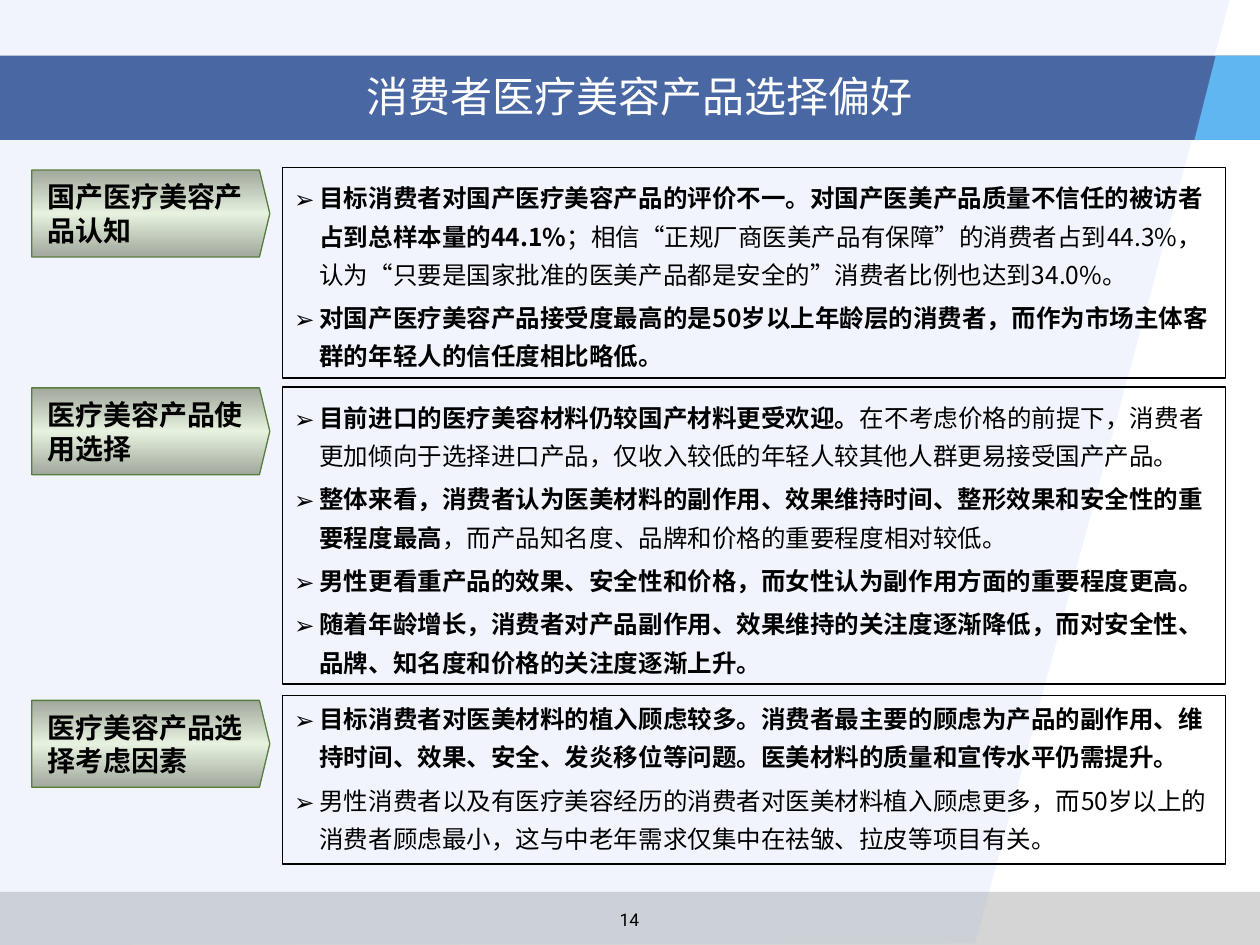
from copy import deepcopy
from dataclasses import dataclass

from lxml import etree
from pptx import Presentation
from pptx.dml.color import RGBColor
from pptx.enum.lang import MSO_LANGUAGE_ID
from pptx.enum.shapes import MSO_SHAPE
from pptx.enum.text import MSO_ANCHOR, PP_ALIGN
from pptx.oxml.ns import qn
from pptx.util import Cm, Pt

RECTANGLE = MSO_SHAPE.RECTANGLE
ARROW = MSO_SHAPE.RIGHT_ARROW
LEFT, CENTER = PP_ALIGN.LEFT, PP_ALIGN.CENTER
TOP, MIDDLE = MSO_ANCHOR.TOP, MSO_ANCHOR.MIDDLE
CHINESE = MSO_LANGUAGE_ID.SIMPLIFIED_CHINESE

COLORS = {
    "footer": "969696", "wash": "94B1EC", "banner": "173D89", "accent": "5FB6F1",
    "text": "000000", "title": "FFFFFF", "box_line": "000000",
    "label_line": "597D3E", "label_edge": "A1A89C", "label_middle": "E6F1DF",
}
CJK_FONT, NUMBER_FONT = "Noto Sans CJK SC", "Roboto"
WIDTH, HEIGHT = 25.4, 19.05
BANNER_TOP, BANNER_HEIGHT = 1.12, 1.7
LABEL_LEFT, LABEL_WIDTH, LABEL_HEIGHT = 0.64, 4.8, 1.75
BOX_LEFT, BOX_WIDTH = 5.69, 19.02
BULLET_FORMAT = {"line_spacing": 1.3, "alignment": LEFT}
BULLET_PROPERTIES = {"marL": Cm(0.75), "indent": Cm(-0.51),
                     "eaLnBrk": 1, "hangingPunct": 1}


@dataclass(frozen=True)
class Section:
    """One labelled box; each point is a pair of bold lead and plain remainder."""
    label: str
    label_top: float
    box_top: float
    box_height: float
    anchor: MSO_ANCHOR
    points: list[tuple[str, str]]


SECTIONS = [
    Section("国产医疗美容产品认知", 3.43, 3.38, 4.24, MIDDLE, [
        ("目标消费者对国产医疗美容产品的评价不一。对国产医美产品质量不信任的被访者占到总样本量的44.1%",
         "；相信“正规厂商医美产品有保障”的消费者占到44.3%，认为“只要是国家批准的医美产品都是安全的”消费者比例也达到34.0%。"),
        ("对国产医疗美容产品接受度最高的是50岁以上年龄层的消费者，而作为市场主体客群的年轻人的信任度相比略低。", ""),
    ]),
    Section("医疗美容产品使用选择", 7.82, 7.8, 5.99, MIDDLE, [
        ("目前进口的医疗美容材料仍较国产材料更受欢迎。",
         "在不考虑价格的前提下，消费者更加倾向于选择进口产品，仅收入较低的年轻人较其他人群更易接受国产产品。"),
        ("整体来看，消费者认为医美材料的副作用、效果维持时间、整形效果和安全性的重要程度最高",
         "，而产品知名度、品牌和价格的重要程度相对较低。"),
        ("男性更看重产品的效果、安全性和价格，而女性认为副作用方面的重要程度更高。", ""),
        ("随着年龄增长，消费者对产品副作用、效果维持的关注度逐渐降低，而对安全性、品牌、知名度和价格的关注度逐渐上升。", ""),
    ]),
    Section("医疗美容产品选择考虑因素", 14.12, 14.02, 3.4, TOP, [
        ("目标消费者对医美材料的植入顾虑较多。消费者最主要的顾虑为产品的副作用、维持时间、效果、安全、发炎移位等问题。医美材料的质量和宣传水平仍需提升。", ""),
        ("", "男性消费者以及有医疗美容经历的消费者对医美材料植入顾虑更多，而50岁以上的消费者顾虑最小，这与中老年需求仅集中在祛皱、拉皮等项目有关。"),
    ]),
]


def rgb(name: str) -> RGBColor:
    return RGBColor.from_string(COLORS[name])


def apply_format(target, values: dict) -> None:
    for attribute, value in values.items():
        setattr(target, attribute, value)


def paint(shape, color: str, opacity: int = 100) -> None:
    """Fill a borderless shape; opacity is in percent."""
    shape.shadow.inherit = False
    shape.line.fill.background()
    shape.fill.solid()
    shape.fill.fore_color.rgb = rgb(color)
    if opacity < 100:
        color_node = shape.fill._xPr.find(f".//{qn('a:srgbClr')}")
        etree.SubElement(color_node, qn("a:alpha"), val=str(opacity * 1000))


def add_block(slide, kind, left: float, top: float, width: float, height: float):
    return slide.shapes.add_shape(kind, Cm(left), Cm(top), Cm(width), Cm(height))


def add_outline(slide, points: list[tuple[float, float]]):
    (start_x, start_y), *others = [(Cm(x), Cm(y)) for x, y in points]
    builder = slide.shapes.build_freeform(start_x, start_y)
    builder.add_line_segments(others, close=True)
    return builder.convert_to_shape()


def add_run(paragraph, words: str, size: float, bold: bool = False,
            color: str = "text", font: str = CJK_FONT) -> None:
    run = paragraph.add_run()
    run.text = words
    run.font.color.rgb = rgb(color)
    apply_format(run.font, {"size": Pt(size), "bold": bold, "name": font,
                            "language_id": CHINESE})
    latin = run.font._element.find(qn("a:latin"))
    east_asian = etree.Element(qn("a:ea"), typeface=font)
    latin.addnext(east_asian)


def add_caption(slide, words: str, area: tuple[float, ...], anchor: MSO_ANCHOR,
                **style) -> None:
    frame = slide.shapes.add_textbox(*map(Cm, area)).text_frame
    apply_format(frame, {"word_wrap": True, "vertical_anchor": anchor})
    frame.paragraphs[0].alignment = CENTER
    add_run(frame.paragraphs[0], words, **style)


def add_background(slide) -> None:
    paint(add_block(slide, RECTANGLE, 0, 17.98, WIDTH, 1.07), "footer", 40)
    paint(add_outline(slide, [(0, 0), (24.79, 0), (19.66, 19.02), (0, HEIGHT)]),
          "wash", 13)
    paint(add_block(slide, RECTANGLE, 0, BANNER_TOP, WIDTH, BANNER_HEIGHT),
          "banner", 77)
    bottom = BANNER_TOP + BANNER_HEIGHT
    paint(add_outline(slide, [(24.51, BANNER_TOP), (24.08, bottom),
                              (WIDTH, bottom), (WIDTH, BANNER_TOP)]), "accent")


def add_label(slide, section: Section) -> None:
    label = add_block(slide, ARROW, LABEL_LEFT, section.label_top,
                      LABEL_WIDTH, LABEL_HEIGHT)
    label.shadow.inherit = False
    label.adjustments[0], label.adjustments[1] = 1, 0.119
    label.line.color.rgb = rgb("label_line")
    label.line.width = Pt(0.75)
    label.fill.gradient()
    label.fill.gradient_angle = 90
    stop_list = label.fill._xPr.find(f".//{qn('a:gsLst')}")
    stop_list.append(deepcopy(stop_list[0]))
    names = ("label_edge", "label_middle", "label_edge")
    for index, (stop, name) in enumerate(zip(label.fill.gradient_stops, names)):
        stop.position = index / 2
        stop.color.rgb = rgb(name)
    frame = label.text_frame
    apply_format(frame, {"word_wrap": True, "vertical_anchor": MIDDLE,
                         "margin_left": Cm(0.32)})
    frame.paragraphs[0].alignment = LEFT
    add_run(frame.paragraphs[0], section.label, 16, bold=True)


def add_findings(slide, section: Section) -> None:
    box = add_block(slide, RECTANGLE, BOX_LEFT, section.box_top,
                    BOX_WIDTH, section.box_height)
    box.shadow.inherit = False
    box.fill.background()
    box.line.color.rgb = rgb("box_line")
    box.line.width = Pt(0.75)
    frame = box.text_frame
    apply_format(frame, {"word_wrap": True, "vertical_anchor": section.anchor,
                         "margin_left": 0, "margin_right": 0,
                         "margin_top": 0, "margin_bottom": 0})
    for index, point in enumerate(section.points):
        paragraph = frame.add_paragraph() if index else frame.paragraphs[0]
        properties = paragraph._p.get_or_add_pPr()
        for attribute, value in BULLET_PROPERTIES.items():
            properties.set(attribute, str(value))
        etree.SubElement(properties, qn("a:buFont"), typeface=CJK_FONT)
        etree.SubElement(properties, qn("a:buChar"), char="➢")
        apply_format(paragraph, BULLET_FORMAT)
        if index:
            paragraph.space_before = Pt(3)
        for words, bold in zip(point, (True, False)):
            if words:
                add_run(paragraph, words, 14, bold=bold)


def main() -> None:
    presentation = Presentation()
    apply_format(presentation, {"slide_width": Cm(WIDTH), "slide_height": Cm(HEIGHT)})
    slide = presentation.slides.add_slide(presentation.slide_layouts[6])
    add_background(slide)
    add_caption(slide, "消费者医疗美容产品选择偏好", (1.47, 1.14, 22.86, 1.57),
                MIDDLE, size=24, color="title")
    for section in SECTIONS:
        add_label(slide, section)
        add_findings(slide, section)
    add_caption(slide, "14", (11, 18.21, 3.38, 0.64), TOP, size=10, font=NUMBER_FONT)
    presentation.save("out.pptx")


if __name__ == "__main__":
    main()
